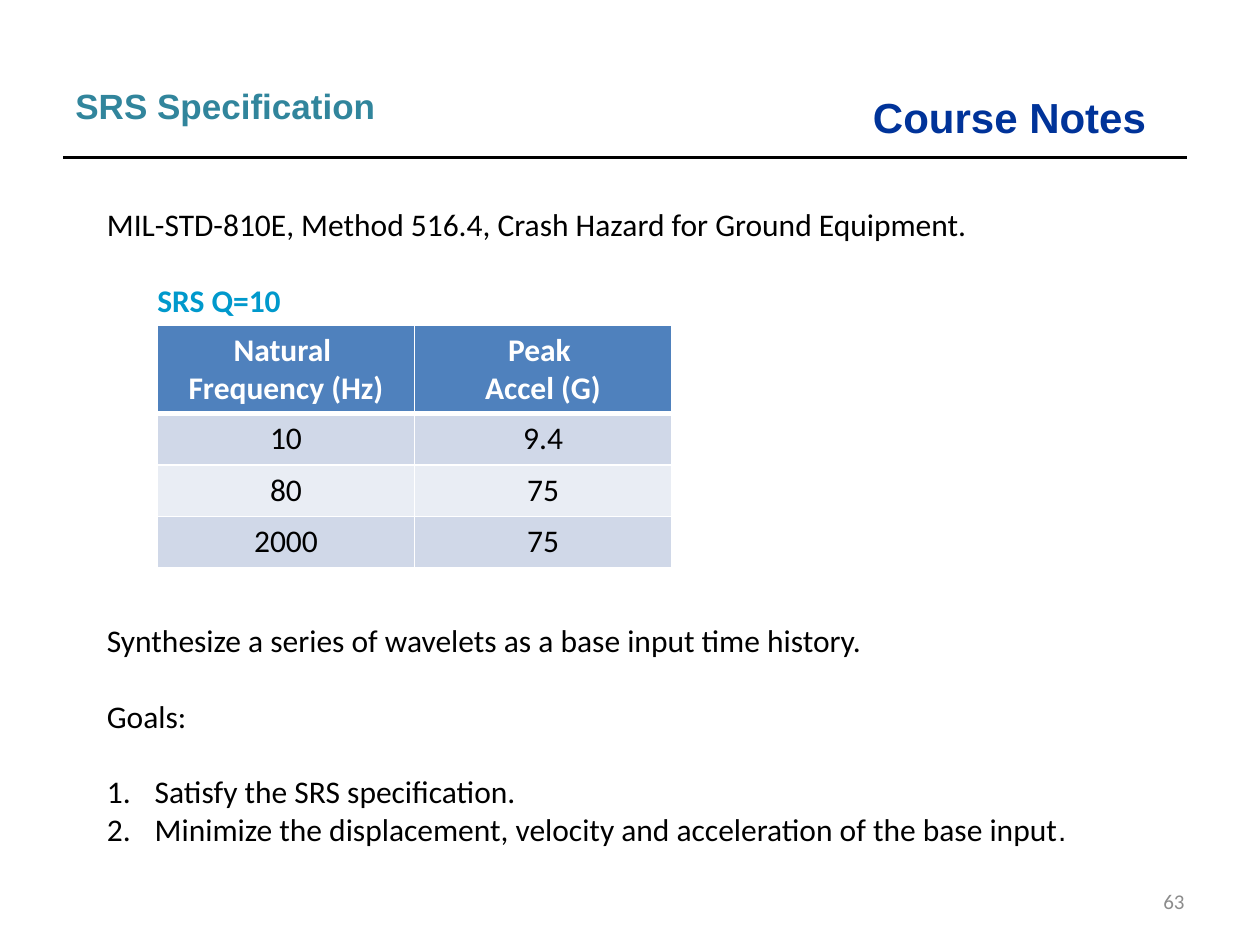
from dataclasses import dataclass

from lxml import etree
from pptx import Presentation
from pptx import util as u
from pptx.dml.color import RGBColor
from pptx.enum import shapes, text
from pptx.oxml import ns


@dataclass(frozen=True)
class Theme:
    heading_font: str = "Arial"
    body_font: str = "Calibri"
    brand: str = "003399"
    title: str = "31859C"
    caption: str = "0099CC"
    ink: str = "000000"
    muted: str = "8C8C8C"
    white: str = "FFFFFF"
    header_fill: str = "4F81BD"
    bands: tuple = ("D0D8E8", "E9EDF4")
    brand_size: int = 24
    title_size: int = 20
    body_size: int = 18
    stop_size: int = 17
    number_size: int = 12
    line_pitch: float = 21.6


THEME = Theme()

# Text, empty lines above it, colour, bold
BODY = [
    ("MIL-STD-810E, Method 516.4, Crash Hazard for Ground Equipment.", 0, THEME.ink, False),
    ("SRS Q=10", 1, THEME.caption, True),
    ("Synthesize a series of wavelets as a base input time history.", 8, THEME.ink, False),
    ("Goals:", 1, THEME.ink, False),
]
GOALS = [
    "Satisfy the SRS specification.",
    "Minimize the displacement, velocity and acceleration of the base input",
]
SRS_ROWS = [
    ("Natural \nFrequency (Hz)", "Peak \nAccel (G)"),
    ("10", "9.4"),
    ("80", "75"),
    ("2000", "75"),
]


def style_runs(para, size, color, font=THEME.body_font, bold=False):
    for span in para.runs:
        span.font.name = font
        span.font.size = u.Pt(size)
        span.font.bold = bold
        span.font.color.rgb = RGBColor.from_string(color)


def add_box(page, left, top, width, height, wrap=True):
    box = page.shapes.add_textbox(*map(u.Inches, (left, top, width, height)))
    box.text_frame.word_wrap = wrap
    return box.text_frame


def add_label(page, place, words, size, color, font=THEME.body_font, bold=False, wrap=True):
    frame = add_box(page, *place, wrap=wrap)
    frame.text = words
    style_runs(frame.paragraphs[0], size, color, font, bold)
    return frame


def add_rule(page, left, right, top):
    rule = page.shapes.add_connector(
        shapes.MSO_CONNECTOR.STRAIGHT,
        u.Inches(left), u.Inches(top), u.Inches(right), u.Inches(top))
    rule.line.width = u.Pt(2.25)
    rule.line.color.rgb = RGBColor.from_string(THEME.ink)
    etree.SubElement(rule._element.spPr, ns.qn("a:effectLst"))


def number_paragraph(para):
    props = para._p.get_or_add_pPr()
    props.set("marL", str(u.Inches(0.38)))
    props.set("indent", str(-u.Inches(0.38)))
    etree.SubElement(props, ns.qn("a:buFont"), typeface="+mj-lt")
    etree.SubElement(props, ns.qn("a:buAutoNum"), type="arabicPeriod")


def add_body(page):
    frame = add_box(page, 0.75, 1.58, 8.33, 5.3)
    para = frame.paragraphs[0]
    for words, gap, color, bold in BODY:
        if gap:
            para = frame.add_paragraph()
            para.space_before = u.Pt(gap * THEME.line_pitch)
        para.text = words
        style_runs(para, THEME.body_size, color, bold=bold)
        if color == THEME.caption:
            para._p.get_or_add_pPr().set("marL", str(u.Inches(0.4)))

    # Numbered goals
    for index, goal in enumerate(GOALS):
        para = frame.add_paragraph()
        para.text = goal
        if index == 0:
            para.space_before = u.Pt(THEME.line_pitch)
        style_runs(para, THEME.body_size, THEME.ink)
        number_paragraph(para)

    # The last full stop has its own font
    stop = para.add_run()
    stop.text = "."
    stop.font.name = THEME.heading_font
    stop.font.size = u.Pt(THEME.stop_size)
    stop.font.color.rgb = RGBColor.from_string(THEME.ink)


def set_borders(cell, bottom, top):
    props = cell._tc.get_or_add_tcPr()
    widths = {"lnL": 1, "lnR": 1, "lnT": top, "lnB": bottom}
    for index, (side, width) in enumerate(widths.items()):
        line = etree.Element(ns.qn(f"a:{side}"), w=str(u.Pt(width)))
        fill = etree.SubElement(line, ns.qn("a:solidFill"))
        etree.SubElement(fill, ns.qn("a:srgbClr"), val=THEME.white)
        props.insert(index, line)


def add_srs_table(page):
    frame = page.shapes.add_table(
        len(SRS_ROWS), 2, u.Inches(1.25), u.Inches(2.58), u.Inches(4.08), u.Inches(1.92))
    table = frame.table
    table.horz_banding = False
    for row_index, values in enumerate(SRS_ROWS):
        header = row_index == 0
        table.rows[row_index].height = u.Inches(0.7 if header else 0.41)
        fill = THEME.header_fill if header else THEME.bands[(row_index - 1) % 2]
        for column, words in enumerate(values):
            cell = table.cell(row_index, column)
            cell.text_frame.text = words
            cell.fill.solid()
            cell.fill.fore_color.rgb = RGBColor.from_string(fill)
            set_borders(cell, bottom=3 if header else 1, top=3 if row_index == 1 else 1)
            for para in cell.text_frame.paragraphs:
                para.alignment = text.PP_ALIGN.CENTER
                style_runs(para, THEME.body_size,
                           THEME.white if header else THEME.ink, bold=header)


def main():
    deck = Presentation()
    deck.slide_width, deck.slide_height = u.Inches(10), u.Inches(7.5)
    page = deck.slides.add_slide(deck.slide_layouts[6])

    # Heading band
    add_label(page, (6.83, 0.68, 2.72, 0.5), "Course Notes", THEME.brand_size,
              THEME.brand, THEME.heading_font, bold=True, wrap=False)
    add_rule(page, 0.5, 9.42, 1.25)
    title = add_label(page, (0.5, 0.62, 5, 0.44), "SRS Specification", THEME.title_size,
                      THEME.title, THEME.heading_font, bold=True)
    title.paragraphs[0].space_before = title.paragraphs[0].space_after = u.Pt(2)

    # Content
    add_body(page)
    add_srs_table(page)

    # Page number
    number = add_label(page, (7.17, 6.95, 2.33, 0.4), "63", THEME.number_size, THEME.muted)
    number.vertical_anchor = text.MSO_ANCHOR.MIDDLE
    number.paragraphs[0].alignment = text.PP_ALIGN.RIGHT

    deck.save("out.pptx")


if __name__ == "__main__":
    main()
